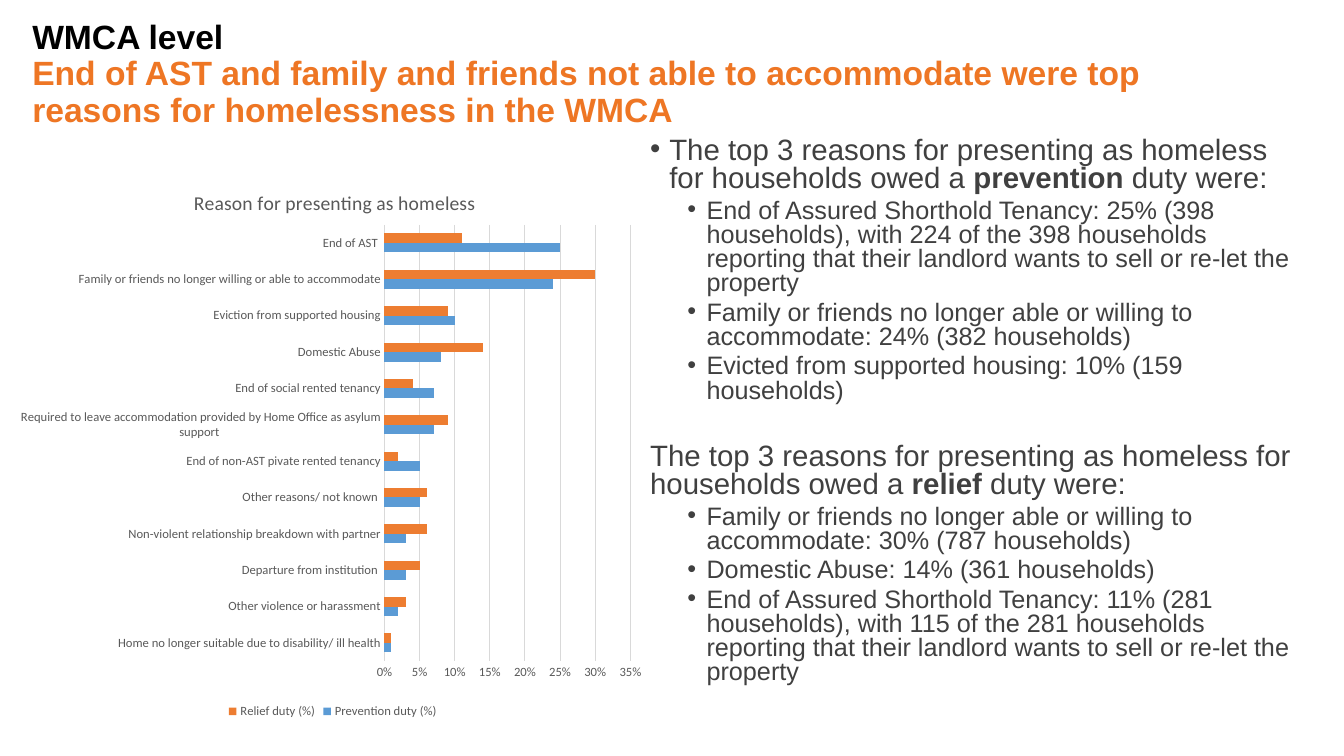
from lxml import etree
from pptx import Presentation
from pptx.chart.data import CategoryChartData
from pptx.dml.color import RGBColor
from pptx.enum.chart import XL_CHART_TYPE, XL_LEGEND_POSITION, XL_TICK_MARK
from pptx.enum.text import MSO_ANCHOR, PP_ALIGN
from pptx.oxml.ns import qn
from pptx.util import Inches, Pt

BAR_CLUSTERED = XL_CHART_TYPE.BAR_CLUSTERED
LEGEND_BOTTOM = XL_LEGEND_POSITION.BOTTOM
NO_TICKS = XL_TICK_MARK.NONE
MIDDLE, LEFT = MSO_ANCHOR.MIDDLE, PP_ALIGN.LEFT

COLORS = {
    "black": "000000",
    "heading": "EE7624",
    "body": "404040",
    "label": "595959",
    "grid": "D9D9D9",
    "prevention": "5B9BD5",
    "relief": "ED7D31",
}

HEADING = ("End of AST and family and friends not able to accommodate "
           "were top reasons for homelessness in the WMCA")

# Reason, prevention share, relief share, from the bottom bar up
REASONS = [
    ("Home no longer suitable due to disability/ ill health", 0.01, 0.01),
    ("Other violence or harassment", 0.02, 0.03),
    ("Departure from institution ", 0.03, 0.05),
    ("Non-violent relationship breakdown with partner", 0.03, 0.06),
    ("Other reasons/ not known ", 0.05, 0.06),
    ("End of non-AST pivate rented tenancy", 0.05, 0.02),
    ("Required to leave accommodation provided by Home Office as asylum support ",
     0.07, 0.09),
    ("End of social rented tenancy", 0.07, 0.04),
    ("Domestic Abuse", 0.08, 0.14),
    ("Eviction from supported housing", 0.1, 0.09),
    ("Family or friends no longer willing or able to accommodate", 0.24, 0.3),
    ("End of AST ", 0.25, 0.11),
]

# Duty, bulleted lead, space before the lead, top reasons
DUTIES = [
    ("prevention", True, 0, [
        "End of Assured Shorthold Tenancy: 25% (398 households), with 224 of the "
        "398 households reporting that their landlord wants to sell or re-let the property",
        "Family or friends no longer able or willing to accommodate: 24% (382 households)",
        "Evicted from supported housing: 10% (159 households)",
    ]),
    ("relief", False, 28.5, [
        "Family or friends no longer able or willing to accommodate: 30% (787 households)",
        "Domestic Abuse: 14% (361 households)",
        "End of Assured Shorthold Tenancy: 11% (281 households), with 115 of the "
        "281 households reporting that their landlord wants to sell or re-let the property",
    ]),
]


def format_font(font, size, color, name="Arial", bold=False):
    font.size = Pt(size)
    font.name = name
    font.bold = bold
    font.color.rgb = RGBColor.from_string(COLORS[color])


def add_run(paragraph, text, **style):
    run = paragraph.add_run()
    run.text = text
    format_font(run.font, **style)


def set_bullet(paragraph, indent):
    props = paragraph._p.get_or_add_pPr()
    props.set("marL", str(Inches(indent)))
    props.set("indent", str(-Inches(0.19)))
    etree.SubElement(props, qn("a:buFont")).set("typeface", "Arial")
    etree.SubElement(props, qn("a:buChar")).set("char", "•")


def set_layout(parent, index, **values):
    """Place a chart part by fractions of the chart area."""
    for old in parent.findall(qn("c:layout")):
        parent.remove(old)
    layout = etree.Element(qn("c:layout"))
    parent.insert(index, layout)
    manual = etree.SubElement(layout, qn("c:manualLayout"))
    for tag, value in values.items():
        etree.SubElement(manual, qn("c:" + tag)).set("val", str(value))


class SlideBuilder:
    def __init__(self, presentation):
        self.slide = presentation.slides.add_slide(presentation.slide_layouts[5])
        self.chart_label = dict(size=9, color="label", name="Calibri")

    def add_title(self, left, top, width, height):
        title = self.slide.shapes.title
        title.left, title.top = Inches(left), Inches(top)
        title.width, title.height = Inches(width), Inches(height)
        frame = title.text_frame
        frame.word_wrap = True
        frame.vertical_anchor = MIDDLE
        heading = frame.paragraphs[0]
        heading.alignment = LEFT
        heading.line_spacing = 0.9
        add_run(heading, "WMCA level", size=24, color="black", bold=True)
        heading.add_line_break()
        add_run(heading, HEADING, size=24, color="heading", bold=True)

    def add_duties(self, left, top, width, height):
        box = self.slide.shapes.add_textbox(
            Inches(left), Inches(top), Inches(width), Inches(height))
        frame = box.text_frame
        frame.word_wrap = True
        lead_style = dict(size=21, color="body")
        for number, (duty, bulleted, gap, reasons) in enumerate(DUTIES):
            lead = frame.add_paragraph() if number else frame.paragraphs[0]
            if bulleted:
                set_bullet(lead, 0.19)
            lead.line_spacing = 0.8
            lead.space_before = Pt(gap)
            add_run(lead, "The top 3 reasons for presenting as homeless for "
                          "households owed a ", **lead_style)
            add_run(lead, duty, bold=True, **lead_style)
            add_run(lead, " duty were:", **lead_style)
            for reason in reasons:
                item = frame.add_paragraph()
                item.level = 1
                set_bullet(item, 0.56)
                item.line_spacing = 0.8
                item.space_before = Pt(3.8)
                add_run(item, reason, size=18, color="body")

    def add_reasons_chart(self, left, top, width, height):
        names, prevention, relief = zip(*REASONS)
        data = CategoryChartData(number_format="0%")
        data.categories = names
        data.add_series("Prevention duty (%)", prevention)
        data.add_series("Relief duty (%)", relief)
        chart = self.slide.shapes.add_chart(
            BAR_CLUSTERED, Inches(left), Inches(top), Inches(width),
            Inches(height), data).chart
        format_font(chart.font, 10, "black", "Calibri")

        # Bars
        plot = chart.plots[0]
        plot.gap_width = 182
        plot.overlap = 0
        plot.vary_by_categories = False
        for series, color in zip(plot.series, ("prevention", "relief")):
            series.format.fill.solid()
            series.format.fill.fore_color.rgb = RGBColor.from_string(COLORS[color])

        # Axes
        shares = chart.value_axis
        shares.minimum_scale, shares.maximum_scale = 0, 0.35
        shares.major_unit = 0.05
        shares.tick_labels.number_format = "0%"
        shares.tick_labels.number_format_is_linked = False
        shares.format.line.fill.background()
        for axis in (chart.category_axis, shares):
            axis.major_tick_mark = axis.minor_tick_mark = NO_TICKS
            format_font(axis.tick_labels.font, **self.chart_label)
        for line in (chart.category_axis.format.line,
                     shares.major_gridlines.format.line):
            line.width = Pt(0.75)
            line.color.rgb = RGBColor.from_string(COLORS["grid"])

        # Title and legend
        chart.has_title = True
        add_run(chart.chart_title.text_frame.paragraphs[0],
                "Reason for presenting as homeless",
                size=14, color="label", name="Calibri")
        chart.has_legend = True
        chart.legend.position = LEGEND_BOTTOM
        chart.legend.include_in_layout = False
        format_font(chart.legend.font, **self.chart_label)

        # Placement inside the chart
        title = chart.chart_title._element
        set_layout(title, 1, xMode="edge", yMode="edge", x=0.28, y=0.04)
        plot_area = chart._chartSpace.chart.plotArea
        set_layout(plot_area, 0, layoutTarget="inner", xMode="edge",
                   yMode="edge", x=0.58, y=0.11, w=0.38, h=0.78)


def main():
    presentation = Presentation()
    presentation.slide_width = Inches(13.33)
    presentation.slide_height = Inches(7.5)
    builder = SlideBuilder(presentation)
    builder.add_duties(6.35, 1.32, 6.57, 5.97)
    builder.add_title(0.22, 0.02, 11.5, 1.45)
    builder.add_reasons_chart(0.09, 1.62, 6.42, 5.55)
    presentation.save("out.pptx")


if __name__ == "__main__":
    main()
